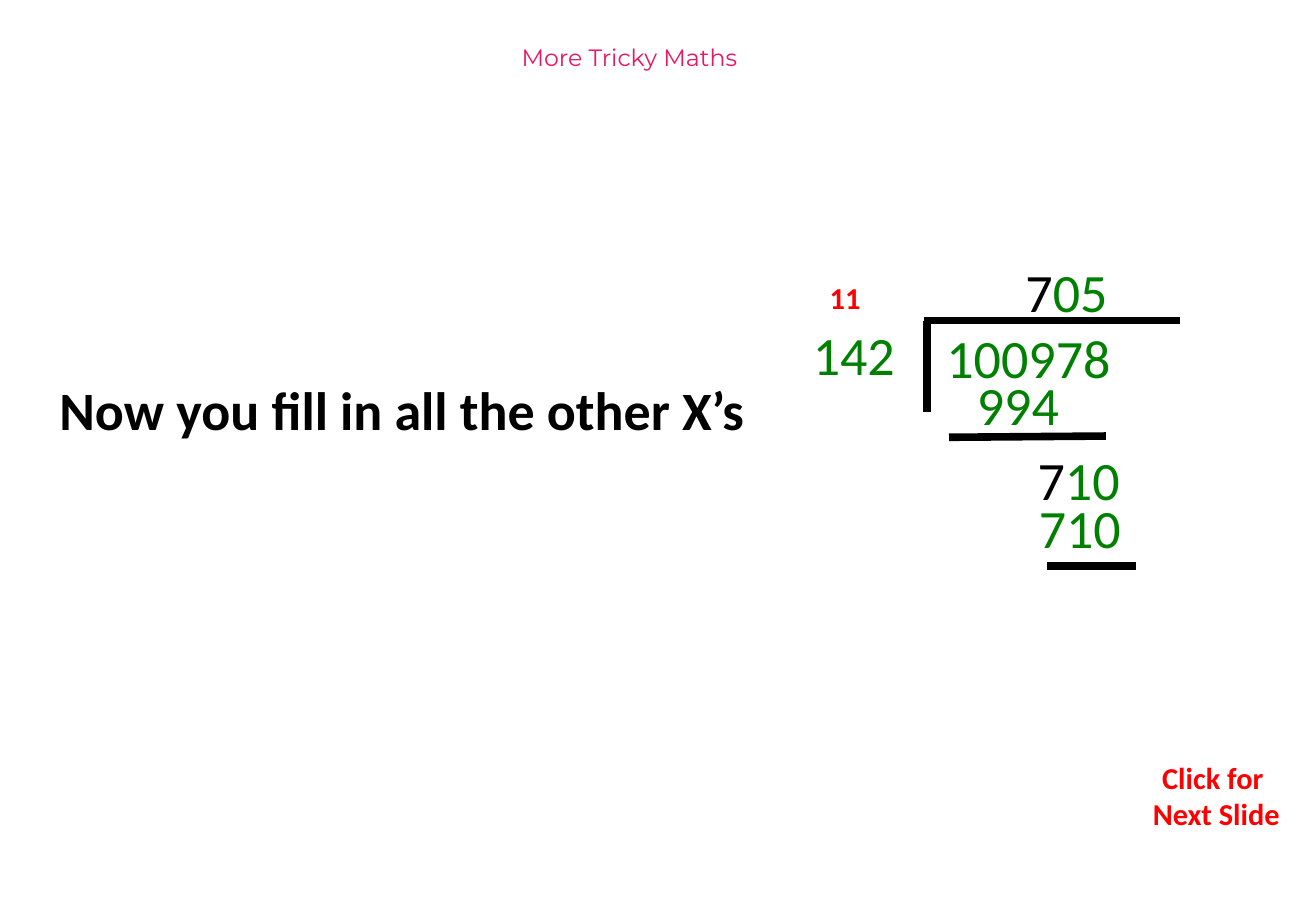
from dataclasses import dataclass

from lxml.etree import SubElement
from pptx import Presentation
from pptx.dml.color import RGBColor
from pptx.enum.shapes import MSO_CONNECTOR as Link
from pptx.enum.text import MSO_ANCHOR as Anchor, MSO_AUTO_SIZE as Fit, PP_ALIGN as Align
from pptx.oxml.ns import qn
from pptx.util import Inches, Pt


@dataclass(frozen=True)
class Theme:
    ink: str = "000000"
    green: str = "008000"
    red: str = "FF0000"
    pink: str = "E81766"
    font: str = "Calibri"
    head: str = "Montserrat"
    large: int = 32
    note: int = 18
    title: int = 14
    rule: float = 4.5


THEME = Theme()


@dataclass(frozen=True)
class Label:
    left: float
    top: float
    width: float
    height: float
    words: tuple[tuple[str, str], ...]
    size: int = THEME.large
    bold: bool = False
    font: str = THEME.font
    center: bool = False


@dataclass(frozen=True)
class Rule:
    x1: float
    y1: float
    x2: float
    y2: float


def number(left: float, top: float, width: float, green: str, black: str = "") -> Label:
    words = ((black, THEME.ink), (green, THEME.green))
    return Label(left, top, width, 0.64, tuple(word for word in words if word[0]))


TITLE = Label(3.96, 0.3, 2.44, 0.58, (("More Tricky Maths", THEME.pink),),
              THEME.title, font=THEME.head, center=True)

LABELS = (
    number(6.59, 2.6, 0.89, "142"),
    number(7.69, 2.62, 1.57, "100978"),
    number(8.34, 2.08, 0.89, "05", "7"),
    number(7.94, 3.01, 0.99, "994"),
    number(8.44, 3.63, 0.99, "10", "7"),
    number(8.45, 4.02, 0.99, "710"),
    Label(6.73, 2.25, 0.52, 0.4, (("11", THEME.red),), THEME.note, True),
    Label(0.39, 3.05, 6.09, 0.64,
          (("Now you fill in all the other X’s", THEME.ink),), bold=True),
    Label(9.38, 6.2, 1.26, 0.71, (("Click for \vNext Slide", THEME.red),),
          THEME.note, True, center=True),
)

RULES = (
    Rule(7.63, 2.64, 7.63, 3.39),
    Rule(7.6, 2.64, 9.71, 2.64),
    Rule(7.81, 3.6, 9.1, 3.59),
    Rule(8.62, 4.66, 9.35, 4.66),
)


def write(shape, label: Label) -> None:
    shape.left, shape.top = Inches(label.left), Inches(label.top)
    shape.width, shape.height = Inches(label.width), Inches(label.height)
    frame = shape.text_frame
    frame.auto_size = Fit.NONE
    frame.word_wrap = not label.center
    frame.vertical_anchor = Anchor.TOP
    para = frame.paragraphs[0]
    para.alignment = Align.CENTER if label.center else Align.LEFT
    para.text = label.words[0][0]
    for text, color in label.words[1:]:
        para.add_run().text = text
    colors = [color for text, color in label.words for line in text.split("\v")]
    for run, color in zip(para.runs, colors):
        run.font.name = label.font
        run.font.size = Pt(label.size)
        run.font.bold = label.bold
        run.font.color.rgb = RGBColor.from_string(color)


def draw(slide, rule: Rule) -> None:
    ends = (Inches(n) for n in (rule.x1, rule.y1, rule.x2, rule.y2))
    line = slide.shapes.add_connector(Link.STRAIGHT, *ends)
    line.line.width = Pt(THEME.rule)
    line.line.color.rgb = RGBColor.from_string(THEME.ink)
    SubElement(line._element.spPr, qn("a:effectLst"))


def main() -> None:
    deck = Presentation()
    deck.slide_width, deck.slide_height = Inches(10.83), Inches(7.5)
    slide = deck.slides.add_slide(deck.slide_layouts[5])
    write(slide.shapes.title, TITLE)
    for label in LABELS:
        write(slide.shapes.add_textbox(0, 0, 0, 0), label)
    for rule in RULES:
        draw(slide, rule)
    deck.save("out.pptx")


if __name__ == "__main__":
    main()
